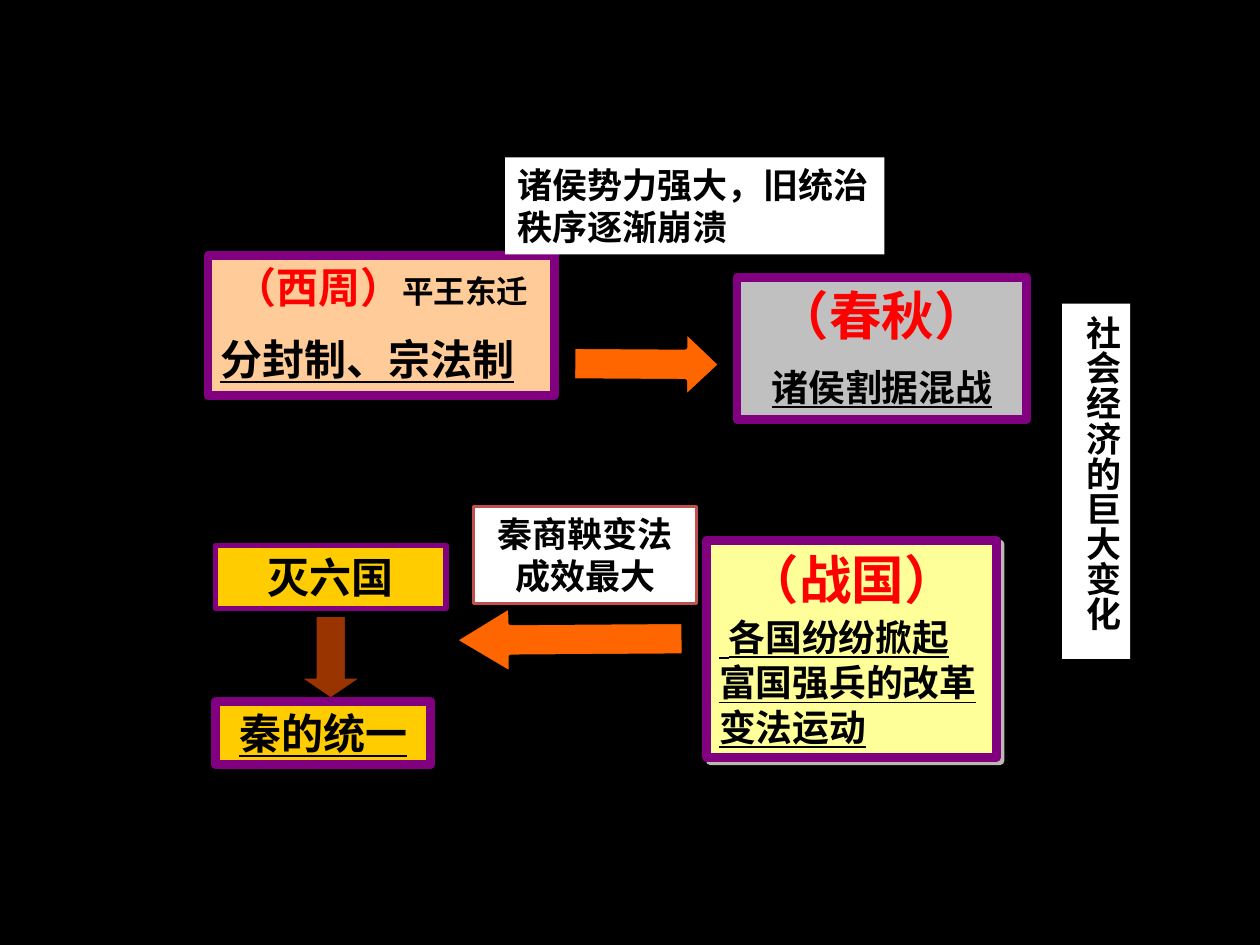
from lxml import etree
from pptx import Presentation
from pptx.dml.color import RGBColor
from pptx.enum import shapes, text
from pptx.oxml import ns
from pptx.util import Inches, Pt

BLACK = RGBColor(0x00, 0x00, 0x00)
WHITE = RGBColor(0xFF, 0xFF, 0xFF)
RED = RGBColor(0xFF, 0x00, 0x00)
PURPLE = RGBColor(0x80, 0x00, 0x80)
PEACH = RGBColor(0xFF, 0xCC, 0x99)
GREY = RGBColor(0xC0, 0xC0, 0xC0)
CREAM = RGBColor(0xFF, 0xFF, 0x99)
GOLD = RGBColor(0xFF, 0xCC, 0x00)
ORANGE = RGBColor(0xFF, 0x66, 0x00)
BROWN = RGBColor(0x99, 0x33, 0x00)
BRICK = RGBColor(0xC0, 0x50, 0x4D)

CENTER, LEFT = text.PP_ALIGN.CENTER, text.PP_ALIGN.LEFT
UP, DOWN = shapes.MSO_SHAPE.UP_ARROW, shapes.MSO_SHAPE.DOWN_ARROW
CJK = "Noto Sans CJK SC"


def style(size, color=BLACK, underline=False, name="Arial"):
    return {"size": Pt(size), "color": color, "underline": underline,
            "name": name, "bold": True}


# Content: paragraphs are (alignment, space before in points, [(words, style)])
BOXES = [
    {"at": (1.65, 2.03, 2.75, 1.11), "fill": PEACH, "line": (PURPLE, 5), "paras": [
        (CENTER, 12, [("（西周）", style(24, RED)), ("平王东迁", style(18))]),
        (LEFT, 12, [("分封制、宗法制", style(24, underline=True))])]},
    {"at": (5.85, 2.2, 2.3, 1.13), "fill": GREY, "line": (PURPLE, 5), "paras": [
        (CENTER, 15, [("（春秋）", style(30, RED))]),
        (CENTER, 10.5, [("诸侯割据混战", style(21, underline=True))])]},
    {"at": (5.61, 4.29, 2.3, 1.72), "fill": CREAM, "line": (PURPLE, 5), "shadow": True, "paras": [
        (CENTER, 0, [("（战国）", style(30, RED))]),
        (LEFT, 0, [(" ", style(24, underline=True)),
                   ("各国纷纷掀起富国强兵的改革变法运动", style(21, underline=True))])]},
    {"at": (1.71, 5.57, 1.71, 0.5), "fill": GOLD, "line": (PURPLE, 5), "paras": [
        (CENTER, 12, [("秦的统一", style(24, underline=True))])]},
    {"at": (4.01, 1.25, 3.01, 0.77), "fill": WHITE, "paras": [
        (LEFT, 10, [("诸侯势力强大，旧统治秩序逐渐崩溃", style(20, name=CJK))])]},
    {"at": (8.43, 2.41, 0.54, 2.82), "fill": WHITE, "vertical": True, "paras": [
        (CENTER, 10, [("社会经济的巨大变化", style(20))])]},
    {"at": (3.76, 4.02, 1.77, 0.77), "fill": WHITE, "line": (BRICK, 2), "paras": [
        (CENTER, 10, [("秦商鞅变法成效最大", style(20, name=CJK))])]},
    {"at": (1.71, 4.33, 1.83, 0.5), "fill": GOLD, "line": (PURPLE, 3), "paras": [
        (CENTER, 12, [("灭六国", style(24))])]},
]

# Arrows: preset, place, rotation, head length, fill, line width
ARROWS = [
    (UP, (4.86, 2.3, 0.55, 1.18), 90.4, 0.53, ORANGE, 3),
    (UP, (4.24, 4.16, 0.55, 1.83), 269.6, 0.83, ORANGE, 3),
    (DOWN, (2.39, 4.89, 0.47, 0.65), 0, 0.34, BROWN, 0.75),
]


def add_block(page, preset, at, fill, line=None):
    block = page.shapes.add_shape(preset, *map(Inches, at))
    block.shadow.inherit = False
    block.fill.solid()
    block.fill.fore_color.rgb = fill
    if line:
        block.line.color.rgb = line[0]
        block.line.width = Pt(line[1])
    else:
        block.line.fill.background()
    return block


def add_shadow(box):
    effects = box._element.spPr.find(ns.qn("a:effectLst"))
    shadow = etree.SubElement(effects, ns.qn("a:outerShdw"), dist=str(Pt(2.8)),
                              dir="2700000", algn="ctr", rotWithShape="0")
    color = etree.SubElement(shadow, ns.qn("a:srgbClr"), val="EEECE1")
    etree.SubElement(color, ns.qn("a:alpha"), val="78000")


def write(box, paras):
    frame = box.text_frame
    frame.word_wrap = True
    frame.auto_size = text.MSO_AUTO_SIZE.SHAPE_TO_FIT_TEXT
    frame.vertical_anchor = text.MSO_ANCHOR.TOP
    for index, (align, before, spans) in enumerate(paras):
        para = frame.add_paragraph() if index else frame.paragraphs[0]
        para.alignment = align
        para.space_before = Pt(before)
        for words, look in spans:
            span = para.add_run()
            span.text = words
            for key, value in look.items():
                if key == "color":
                    span.font.color.rgb = value
                else:
                    setattr(span.font, key, value)


def main():
    deck = Presentation()
    deck.slide_width, deck.slide_height = Inches(10), Inches(7.5)
    page = deck.slides.add_slide(deck.slide_layouts[6])
    page.background.fill.solid()
    page.background.fill.fore_color.rgb = BLACK

    # Arrows between the periods
    for preset, at, rotation, head, fill, width in ARROWS:
        arrow = add_block(page, preset, at, fill, (BLACK, width))
        arrow.rotation = rotation
        arrow.adjustments[0], arrow.adjustments[1] = 0.5, head

    # Periods, events and notes
    for item in BOXES:
        box = add_block(page, shapes.MSO_SHAPE.RECTANGLE, item["at"],
                        item["fill"], item.get("line"))
        write(box, item["paras"])
        if item.get("shadow"):
            add_shadow(box)
        if item.get("vertical"):
            box.text_frame._txBody.bodyPr.set("vert", "eaVert")

    deck.save("out.pptx")


if __name__ == "__main__":
    main()
